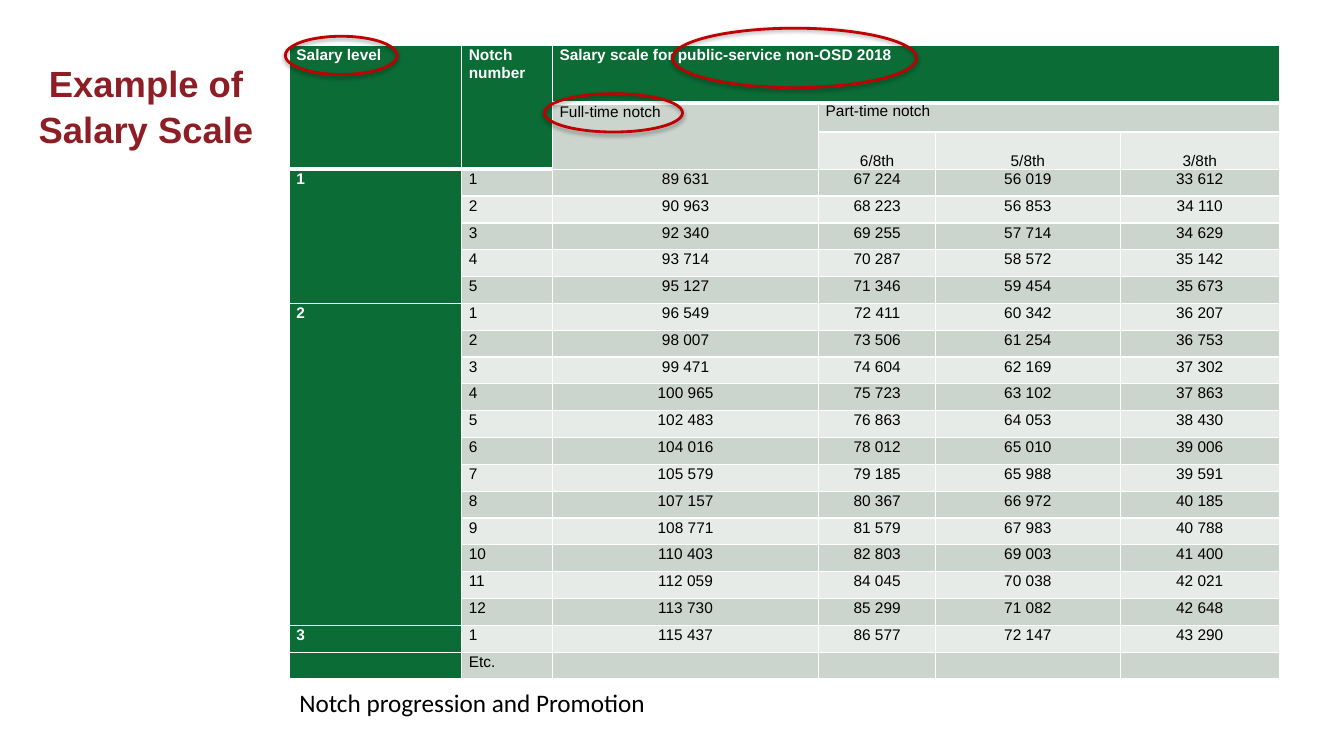
from lxml import etree
from pptx import Presentation
from pptx.dml.color import RGBColor
from pptx.enum.shapes import MSO_SHAPE
from pptx.enum.text import MSO_ANCHOR, PP_ALIGN
from pptx.oxml.ns import qn
from pptx.util import Inches, Pt

OVAL = MSO_SHAPE.OVAL
TOP, BOTTOM = MSO_ANCHOR.TOP, MSO_ANCHOR.BOTTOM
LEFT, CENTER, JUSTIFY = PP_ALIGN.LEFT, PP_ALIGN.CENTER, PP_ALIGN.JUSTIFY
COLORS = {"green": "0B6C36", "dark band": "CCD4CE", "light band": "E7EBE8",
          "white": "FFFFFF", "black": "000000", "title": "8E1E25", "ring": "C00000"}

HEADER_ROWS = [
    ["Salary level", "Notch number", "Salary scale for public-service non-OSD 2018", "", "", ""],
    ["", "", "Full-time notch", "Part-time notch", "", ""],
    ["", "", "", "6/8th", "5/8th", "3/8th"],
]
SALARY_ROWS = [
    ["1", "1", "89 631", "67 224", "56 019", "33 612"],
    ["", "2", "90 963", "68 223", "56 853", "34 110"],
    ["", "3", "92 340", "69 255", "57 714", "34 629"],
    ["", "4", "93 714", "70 287", "58 572", "35 142"],
    ["", "5", "95 127", "71 346", "59 454", "35 673"],
    ["2", "1", "96 549", "72 411", "60 342", "36 207"],
    ["", "2", "98 007", "73 506", "61 254", "36 753"],
    ["", "3", "99 471", "74 604", "62 169", "37 302"],
    ["", "4", "100 965", "75 723", "63 102", "37 863"],
    ["", "5", "102 483", "76 863", "64 053", "38 430"],
    ["", "6", "104 016", "78 012", "65 010", "39 006"],
    ["", "7", "105 579", "79 185", "65 988", "39 591"],
    ["", "8", "107 157", "80 367", "66 972", "40 185"],
    ["", "9", "108 771", "81 579", "67 983", "40 788"],
    ["", "10", "110 403", "82 803", "69 003", "41 400"],
    ["", "11", "112 059", "84 045", "70 038", "42 021"],
    ["", "12", "113 730", "85 299", "71 082", "42 648"],
    ["3", "1", "115 437", "86 577", "72 147", "43 290"],
    ["", "Etc.", "", "", "", ""],
]
COLUMN_WIDTHS = [1.71, 0.9, 2.64, 1.16, 1.83, 1.58]
HEADER_HEIGHTS = [0.57, 0.29, 0.37]
SALARY_HEIGHT = 5.06 / len(SALARY_ROWS)
MERGES = [(0, 0, 2, 0), (0, 1, 2, 1), (0, 2, 0, 5), (1, 2, 2, 2),
          (1, 3, 1, 5), (3, 0, 7, 0), (8, 0, 19, 0)]
RINGS = [(2.83, 0.36, 1.11, 0.38), (5.4, 0.93, 1.37, 0.38), (6.67, 0.28, 2.42, 0.59)]


def write_text(frame, text, size=11, font="Arial", color="black", bold=False,
               align=LEFT, line_spacing=None, space_after=0):
    frame.word_wrap = True
    paragraph = frame.paragraphs[0]
    paragraph.alignment = align
    paragraph.line_spacing = line_spacing
    paragraph.space_after = Pt(space_after)
    if not text:
        etree.SubElement(paragraph._p, qn("a:endParaRPr"), sz=str(size * 100))
        return
    run = paragraph.add_run()
    run.text = text
    run.font.size = Pt(size)
    run.font.name = font
    run.font.bold = bold
    run.font.color.rgb = RGBColor.from_string(COLORS[color])


def add_border(cell, side, width):
    line = etree.SubElement(cell._tc.get_or_add_tcPr(), qn(f"a:ln{side}"), w=str(Pt(width)))
    fill = etree.SubElement(line, qn("a:solidFill"))
    etree.SubElement(fill, qn("a:srgbClr"), val=COLORS["white"])


presentation = Presentation()
presentation.slide_width = Inches(13.33)
presentation.slide_height = Inches(7.5)
slide = presentation.slides.add_slide(presentation.slide_layouts[6])

rows = HEADER_ROWS + SALARY_ROWS
heights = HEADER_HEIGHTS + [SALARY_HEIGHT] * len(SALARY_ROWS)
table = slide.shapes.add_table(
    len(rows), len(COLUMN_WIDTHS), Inches(2.87), Inches(0.45),
    Inches(sum(COLUMN_WIDTHS)), Inches(sum(heights))).table
for column, width in zip(table.columns, COLUMN_WIDTHS):
    column.width = Inches(width)
for row, height in zip(table.rows, heights):
    row.height = Inches(height)

for row_index, values in enumerate(rows):
    for column_index, value in enumerate(values):
        cell = table.cell(row_index, column_index)
        is_header = row_index < len(HEADER_ROWS)
        is_green = row_index == 0 or column_index == 0 or (is_header and column_index == 1)
        is_part_time = row_index in (1, 2) and column_index > 2
        is_centered = column_index > 1 and row_index > 1
        cell.margin_left = cell.margin_right = Inches(0.07)
        cell.margin_top = cell.margin_bottom = 0
        cell.vertical_anchor = BOTTOM if row_index == 2 and is_part_time else TOP
        for side in "LRT":
            add_border(cell, side, 1)
        add_border(cell, "B", 3 if is_header and is_green else 1)
        band = "dark band" if row_index % 2 else "light band"
        cell.fill.solid()
        cell.fill.fore_color.rgb = RGBColor.from_string(COLORS["green" if is_green else band])
        write_text(cell.text_frame, value, bold=is_green,
                   color="white" if is_green else "black",
                   align=CENTER if is_centered else LEFT if is_part_time else JUSTIFY,
                   line_spacing=None if is_part_time else 1.07,
                   space_after=0 if is_part_time or not value else 8)

for first_row, first_column, last_row, last_column in MERGES:
    table.cell(first_row, first_column).merge(table.cell(last_row, last_column))

title = slide.shapes.add_textbox(Inches(0.11), Inches(0.54), Inches(2.68), Inches(3.52))
write_text(title.text_frame, "Example of Salary Scale", size=26, color="title",
           bold=True, align=CENTER, line_spacing=1.05)

for ring_box in RINGS:
    ring = slide.shapes.add_shape(OVAL, *map(Inches, ring_box))
    ring.fill.background()
    ring.line.color.rgb = RGBColor.from_string(COLORS["ring"])
    ring.line.width = Pt(2)
    ring.shadow.inherit = False
    effects = ring._element.spPr.find(qn("a:effectLst"))
    shadow = etree.SubElement(effects, qn("a:outerShdw"), blurRad=str(Pt(3.1)),
                              dist=str(Pt(1.8)), dir="5400000", rotWithShape="0")
    shadow_color = etree.SubElement(shadow, qn("a:srgbClr"), val=COLORS["black"])
    etree.SubElement(shadow_color, qn("a:alpha"), val="35000")

caption = slide.shapes.add_textbox(Inches(2.87), Inches(6.77), Inches(5.28), Inches(0.4))
write_text(caption.text_frame, "Notch progression and Promotion", size=18, font="Calibri")

presentation.save("out.pptx")
